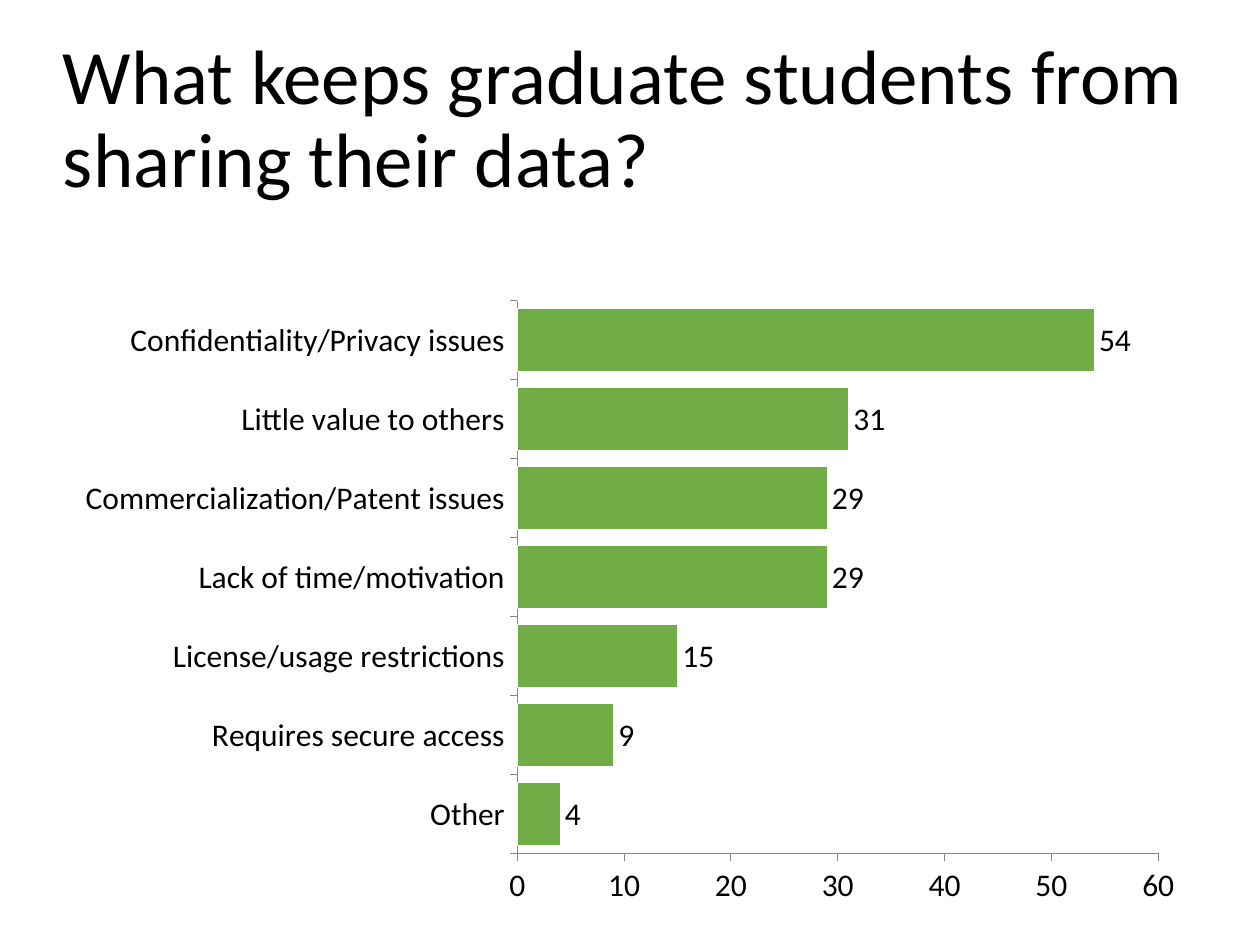
import pptx
import pptx.chart.data
import pptx.dml.color
import pptx.enum.chart
import pptx.enum.shapes
import pptx.enum.text
import pptx.util

Pt = pptx.util.Pt
RGBColor = pptx.dml.color.RGBColor

BLACK = RGBColor(0x00, 0x00, 0x00)
WHITE = RGBColor(0xFF, 0xFF, 0xFF)
GREEN = RGBColor(0x70, 0xAD, 0x47)
GRAY = RGBColor(0x87, 0x87, 0x87)
FONT = "Calibri"
LEFT, WIDTH = Pt(36), Pt(648)

# Bar charts count categories from the bottom up.
REASONS = {
    "Other": 4,
    "Requires secure access": 9,
    "License/usage restrictions": 15,
    "Lack of time/motivation": 29,
    "Commercialization/Patent issues": 29,
    "Little value to others": 31,
    "Confidentiality/Privacy issues": 54,
}


def style_font(font, size):
    font.name = FONT
    font.size = Pt(size)
    font.color.rgb = BLACK


def add_title(slide, text):
    """Add the title in an unfilled, square-cornered rounded rectangle."""
    s = slide.shapes.add_shape(
        pptx.enum.shapes.MSO_SHAPE.ROUNDED_RECTANGLE,
        LEFT, Pt(21.6), WIDTH, Pt(143.3))
    s.adjustments[0] = 0
    s.shadow.inherit = False
    s.fill.background()
    s.line.fill.background()
    tf = s.text_frame
    tf.word_wrap = True
    tf.vertical_anchor = pptx.enum.text.MSO_ANCHOR.TOP
    tf.margin_left = tf.margin_right = tf.margin_top = tf.margin_bottom = 0
    p = tf.paragraphs[0]
    p.alignment = pptx.enum.text.PP_ALIGN.LEFT
    p.line_spacing = 0.9
    r = p.add_run()
    r.text = text
    style_font(r.font, 44)


def style_axis(axis):
    axis.has_major_gridlines = False
    axis.major_tick_mark = pptx.enum.chart.XL_TICK_MARK.OUTSIDE
    axis.minor_tick_mark = pptx.enum.chart.XL_TICK_MARK.NONE
    axis.format.line.color.rgb = GRAY
    axis.format.line.width = Pt(0.5)
    style_font(axis.tick_labels.font, 18)


def add_bar_chart(slide, values):
    data = pptx.chart.data.CategoryChartData()
    data.categories = list(values)
    data.add_series("Series 1", list(values.values()))
    chart = slide.shapes.add_chart(
        pptx.enum.chart.XL_CHART_TYPE.BAR_CLUSTERED,
        LEFT, Pt(164.7), WIDTH, Pt(359.1), data).chart
    chart.has_legend = False
    chart.has_title = False
    style_font(chart.font, 18)
    for axis in (chart.category_axis, chart.value_axis):
        style_axis(axis)
    chart.value_axis.minimum_scale = 0
    chart.value_axis.maximum_scale = 60
    chart.value_axis.major_unit = 10

    plot = chart.plots[0]
    plot.gap_width = 25
    plot.vary_by_categories = False
    bars = plot.series[0].format
    bars.fill.solid()
    bars.fill.fore_color.rgb = GREEN
    bars.line.color.rgb = WHITE
    bars.line.width = Pt(0.5)

    plot.has_data_labels = True
    labels = plot.data_labels
    labels.show_value = True
    labels.position = pptx.enum.chart.XL_LABEL_POSITION.OUTSIDE_END
    style_font(labels.font, 18)


def main():
    prs = pptx.Presentation()
    prs.slide_width, prs.slide_height = Pt(720), Pt(540)
    slide = prs.slides.add_slide(prs.slide_layouts[6])
    add_title(slide, "What keeps graduate students from sharing their data?")
    add_bar_chart(slide, REASONS)
    prs.save("out.pptx")


if __name__ == "__main__":
    main()
